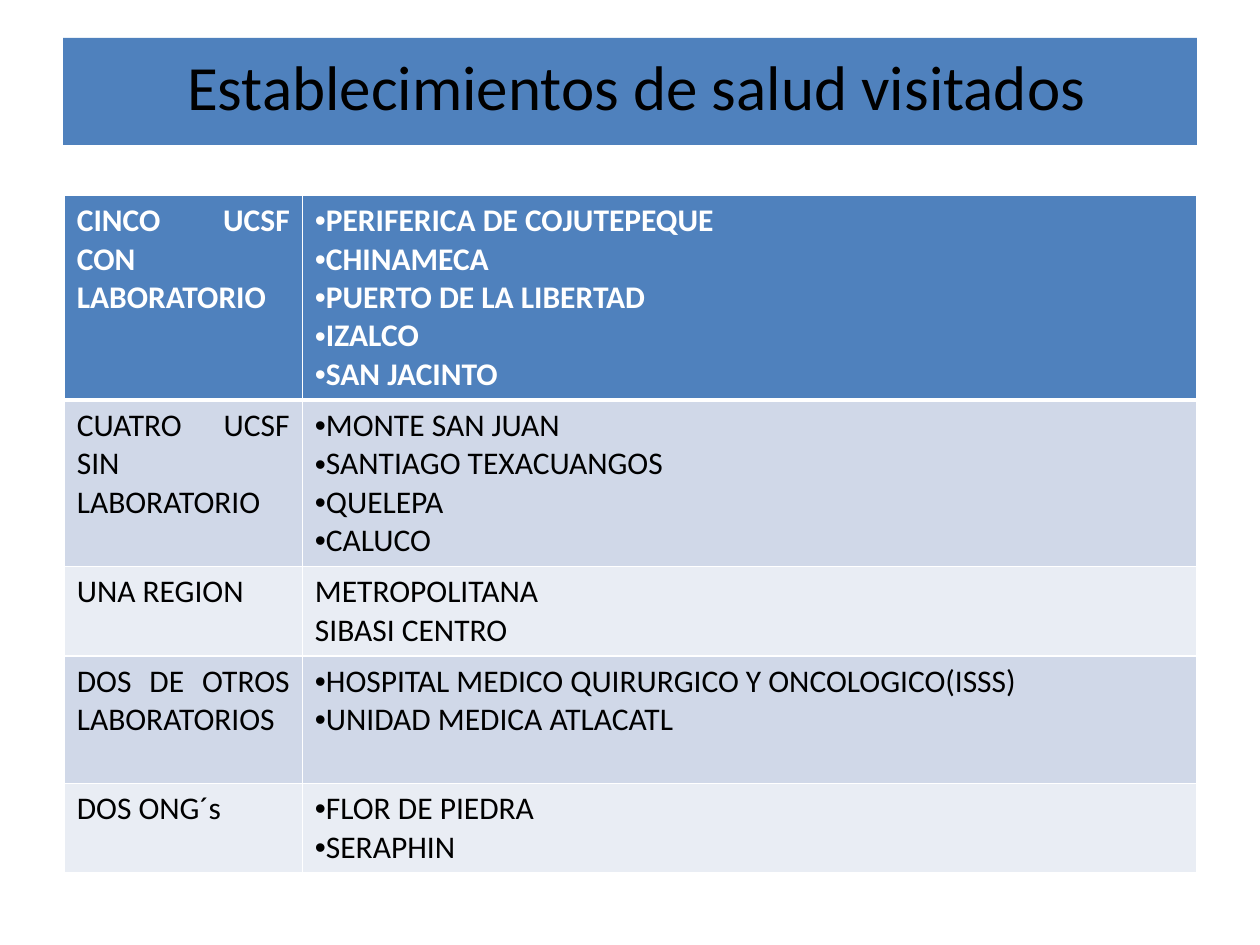
from lxml import etree
from pptx import Presentation
from pptx.dml.color import RGBColor
from pptx.enum.text import MSO_ANCHOR, PP_ALIGN
from pptx.oxml.ns import qn
from pptx.util import Inches, Pt

CENTER, JUSTIFY = PP_ALIGN.CENTER, PP_ALIGN.JUSTIFY
TOP, MIDDLE = MSO_ANCHOR.TOP, MSO_ANCHOR.MIDDLE

THEME = {
    "blue": "4F81BD",
    "bands": ("D0D8E8", "E9EDF4"),
    "white": "FFFFFF",
    "black": "000000",
    "font": "Calibri",
    "title_size": 36,
    "body_size": 18,
}

ROWS = [
    (1.62, "CINCO UCSF CON LABORATORIO", True,
     ["PERIFERICA DE COJUTEPEQUE", "CHINAMECA", "PUERTO DE LA LIBERTAD",
      "IZALCO", "SAN JACINTO"]),
    (1.32, "CUATRO UCSF SIN LABORATORIO", True,
     ["MONTE SAN JUAN", "SANTIAGO TEXACUANGOS", "QUELEPA", "CALUCO"]),
    (0.71, "UNA REGION", False, ["METROPOLITANA", "SIBASI CENTRO"]),
    (1.01, "DOS DE OTROS LABORATORIOS", True,
     ["HOSPITAL MEDICO QUIRURGICO Y ONCOLOGICO(ISSS)", "UNIDAD MEDICA ATLACATL"]),
    (0.71, "DOS ONG´s", True, ["FLOR DE PIEDRA", "SERAPHIN"]),
]


def write(p, text, size, color, bold, align, bullet=False):
    p.alignment = align
    if bullet:
        pPr = p._p.get_or_add_pPr()
        etree.SubElement(pPr, qn("a:buFont")).set("typeface", "Arial")
        etree.SubElement(pPr, qn("a:buChar")).set("char", "•")
    r = p.add_run()
    r.text = text
    font = {"name": THEME["font"], "size": Pt(size), "bold": bold}
    for name, value in font.items():
        setattr(r.font, name, value)
    r.font.color.rgb = RGBColor.from_string(color)


def add_borders(cell, widths):
    tcPr = cell._tc.get_or_add_tcPr()
    for side, width in widths.items():
        ln = etree.SubElement(tcPr, qn(f"a:ln{side}"), w=str(Pt(width)))
        fill = etree.SubElement(ln, qn("a:solidFill"))
        etree.SubElement(fill, qn("a:srgbClr")).set("val", THEME["white"])


prs = Presentation()
prs.slide_width, prs.slide_height = Inches(10), Inches(7.5)
s = prs.slides.add_slide(prs.slide_layouts[5])

title = s.shapes.title
box = {"left": 0.5, "top": 0.3, "width": 9, "height": 0.85}
for name, value in box.items():
    setattr(title, name, Inches(value))
title.fill.solid()
title.fill.fore_color.rgb = RGBColor.from_string(THEME["blue"])
tf = title.text_frame
frame = {"word_wrap": True, "vertical_anchor": MIDDLE,
         "margin_left": Inches(0.2), "margin_bottom": Inches(0.15)}
for name, value in frame.items():
    setattr(tf, name, value)
write(tf.paragraphs[0], "Establecimientos de salud visitados",
      THEME["title_size"], THEME["black"], False, CENTER)

table = s.shapes.add_table(len(ROWS), 2, Inches(0.51), Inches(1.55), Inches(8.99),
                           Inches(sum(row[0] for row in ROWS))).table
for column, width in zip(table.columns, (1.89, 7.1)):
    column.width = Inches(width)

for i, (height, group, bulleted, places) in enumerate(ROWS):
    header = i == 0
    table.rows[i].height = Inches(height)
    fill = THEME["blue"] if header else THEME["bands"][(i - 1) % 2]
    color = THEME["white"] if header else THEME["black"]
    widths = {"L": 1, "R": 1, "T": 3 if i == 1 else 1, "B": 3 if header else 1}
    for j, lines in enumerate(([group], places)):
        cell = table.cell(i, j)
        add_borders(cell, widths)
        cell.fill.solid()
        cell.fill.fore_color.rgb = RGBColor.from_string(fill)
        cell.vertical_anchor = TOP
        tf = cell.text_frame
        for k, line in enumerate(lines):
            p = tf.add_paragraph() if k else tf.paragraphs[0]
            write(p, line, THEME["body_size"], color, header, JUSTIFY,
                  bulleted and j == 1)

prs.save("out.pptx")
